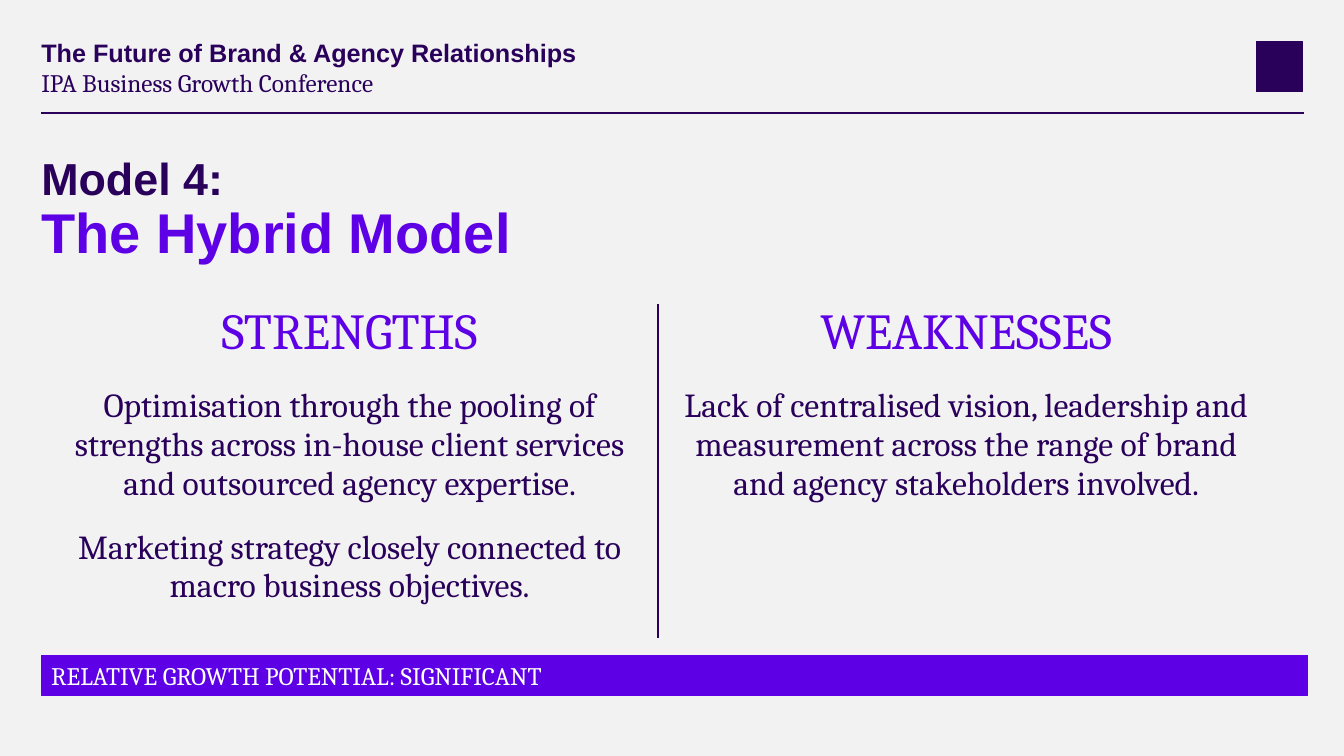
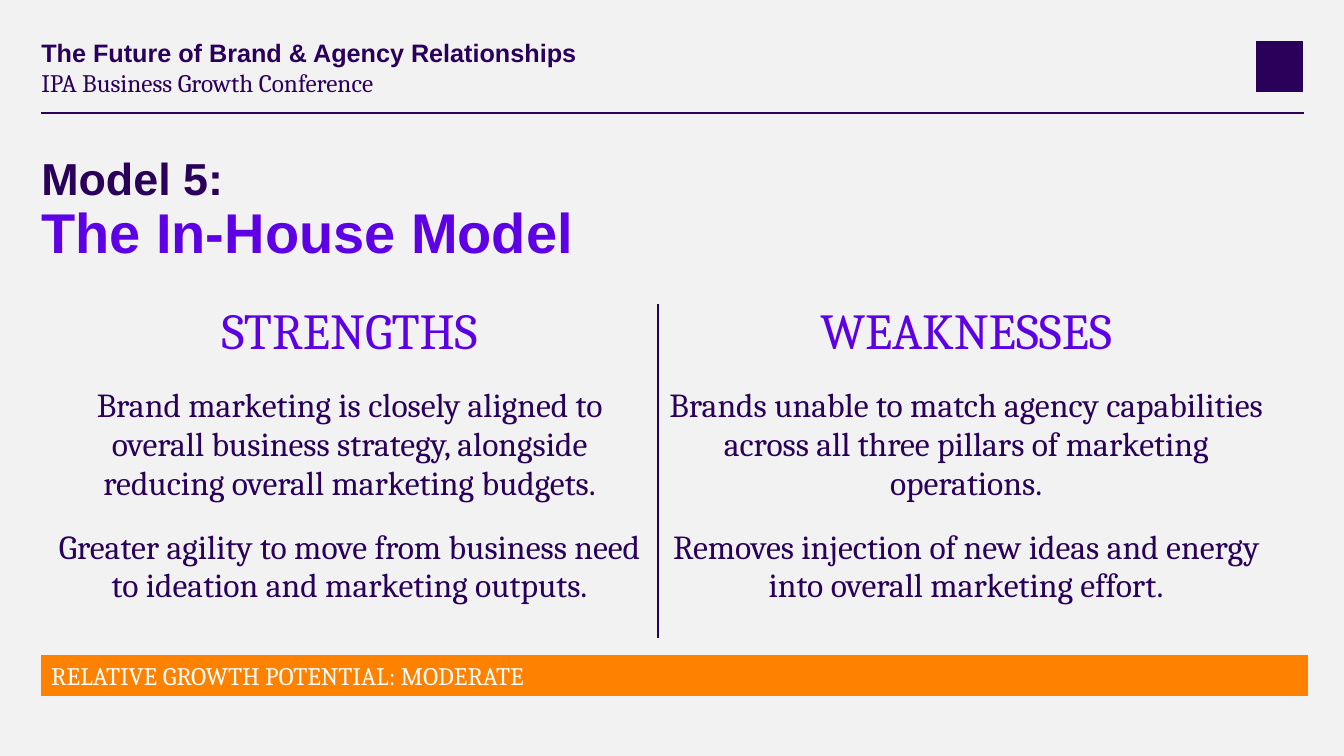
import enum

import pptx
import pptx.dml.color
import pptx.enum.shapes
import pptx.enum.text
import pptx.oxml
import pptx.oxml.ns
import pptx.util
from dataclasses import dataclass
from pptx.util import Inches

Align = pptx.enum.text.PP_ALIGN
Anchor = pptx.enum.text.MSO_ANCHOR


@dataclass(frozen=True)
class Theme:
    # Colours
    paper: str = "F2F2F2"
    ink: str = "29005A"
    accent: str = "5E00E6"
    white: str = "FFFFFF"
    # Fonts
    sans: str = "Arial"
    serif: str = "Cambria"
    # Type sizes and line width in points
    small: int = 18
    body: int = 24
    kicker: int = 32
    heading: int = 36
    title: int = 40
    rule: float = 1.5


class Rating(enum.Enum):
    SIGNIFICANT = "5E00E6"
    MODERATE = "FF8100"


def rgb(value):
    return pptx.dml.color.RGBColor.from_string(value)


def write(para, text, *, font, size, color, bold=False):
    """Add a formatted span of text to a paragraph."""
    span = para.add_run()
    span.text = text
    span.font.name = font
    span.font.size = pptx.util.Pt(size)
    span.font.bold = bold
    span.font.color.rgb = rgb(color)


def set_border(cell, side, color=None, width=0):
    """Draw one cell edge, or clear it when no color is given."""
    namespace = pptx.oxml.ns.nsdecls("a")
    if color:
        paint = f'<a:solidFill><a:srgbClr val="{color}"/></a:solidFill>'
    else:
        paint = "<a:noFill/>"
    edge = f'<a:ln{side} {namespace} w="{pptx.util.Pt(width)}">{paint}</a:ln{side}>'
    cell._tc.get_or_add_tcPr().append(pptx.oxml.parse_xml(edge))


class ModelDeck:
    LEFT = 0.41
    RIGHT = 12.93

    def __init__(self, theme):
        self.theme = theme
        self.deck = pptx.Presentation()
        self.deck.slide_width = Inches(13.33)
        self.deck.slide_height = Inches(7.5)
        self.page = None

    def add_page(self):
        self.page = self.deck.slides.add_slide(self.deck.slide_layouts[6])
        fill = self.page.background.fill
        fill.solid()
        fill.fore_color.rgb = rgb(self.theme.paper)
        self.add_header()

    def add_line(self, left, top, right, bottom):
        line = self.page.shapes.add_connector(
            pptx.enum.shapes.MSO_CONNECTOR.STRAIGHT,
            Inches(left), Inches(top), Inches(right), Inches(bottom))
        line.line.color.rgb = rgb(self.theme.ink)
        line.line.width = pptx.util.Pt(self.theme.rule)
        effects = f'<a:effectLst {pptx.oxml.ns.nsdecls("a")}/>'
        line._element.spPr.append(pptx.oxml.parse_xml(effects))

    def add_block(self, left, top, width, height, color):
        block = self.page.shapes.add_shape(
            pptx.enum.shapes.MSO_SHAPE.RECTANGLE,
            Inches(left), Inches(top), Inches(width), Inches(height))
        block.shadow.inherit = False
        block.fill.solid()
        block.fill.fore_color.rgb = rgb(color)
        block.line.color.rgb = rgb(color)
        block.line.width = pptx.util.Pt(0.75)
        return block

    def add_text(self, top, width, height, anchor=Anchor.TOP):
        """Add a box without margins and return its first paragraph."""
        box = self.page.shapes.add_textbox(
            Inches(self.LEFT), Inches(top), Inches(width), Inches(height))
        frame = box.text_frame
        frame.word_wrap = True
        frame.vertical_anchor = anchor
        frame.margin_left = frame.margin_right = 0
        frame.margin_top = frame.margin_bottom = 0
        para = frame.paragraphs[0]
        para.line_spacing = 0.9
        return para

    def add_header(self):
        theme = self.theme
        self.add_line(self.LEFT, 1.12, self.RIGHT, 1.12)
        # Plain emblem in the corner
        self.add_block(12.46, 0.41, 0.46, 0.5, theme.ink)
        write(self.add_text(0.4, 8.27, 0.27), "The Future of Brand & Agency Relationships",
              font=theme.sans, size=theme.small, color=theme.ink, bold=True)
        write(self.add_text(0.7, 8.27, 0.27), "IPA Business Growth Conference",
              font=theme.serif, size=theme.small, color=theme.ink)

    def add_title(self, number, name):
        theme = self.theme
        para = self.add_text(1.55, self.RIGHT - self.LEFT, 1.09, Anchor.MIDDLE)
        write(para, f"Model {number}:", font=theme.sans, size=theme.kicker,
              color=theme.ink, bold=True)
        para.add_line_break()
        write(para, name, font=theme.sans, size=theme.title,
              color=theme.accent, bold=True)

    def add_comparison(self, columns):
        """Set headed columns side by side, with a rule between them."""
        width, height = 12.23, 3.31
        table = self.page.shapes.add_table(
            1, len(columns), Inches(self.LEFT), Inches(3.02),
            Inches(width), Inches(height)).table
        table.first_row = table.horz_banding = False
        table.rows[0].height = Inches(height)
        last = len(columns) - 1
        for index, (heading, points) in enumerate(columns.items()):
            table.columns[index].width = Inches(width / len(columns))
            cell = table.cell(0, index)
            ruled = {"L": index > 0, "R": index < last, "T": False, "B": False}
            for side, shown in ruled.items():
                if shown:
                    set_border(cell, side, self.theme.ink, self.theme.rule)
                else:
                    set_border(cell, side)
            cell.fill.background()
            self.fill_cell(cell, heading, points)

    def fill_cell(self, cell, heading, points):
        theme = self.theme
        cell.margin_left = cell.margin_right = Inches(0.1)
        cell.margin_top = cell.margin_bottom = 0
        cell.vertical_anchor = Anchor.TOP
        frame = cell.text_frame
        for index, text in enumerate([heading, *points]):
            para = frame.add_paragraph() if index else frame.paragraphs[0]
            para.alignment = Align.CENTER
            para.space_after = pptx.util.Pt(18)
            write(para, text, font=theme.serif,
                  size=theme.body if index else theme.heading,
                  color=theme.ink if index else theme.accent)

    def add_rating(self, rating):
        bar = self.add_block(self.LEFT, 6.5, 12.56, 0.4, rating.value)
        bar.text_frame.word_wrap = True
        bar.text_frame.vertical_anchor = Anchor.MIDDLE
        para = bar.text_frame.paragraphs[0]
        para.alignment = Align.LEFT
        write(para, f"RELATIVE GROWTH POTENTIAL: {rating.name}",
              font=self.theme.serif, size=self.theme.small, color=self.theme.white)

    def add_model(self, number, name, strengths, weaknesses, rating):
        self.add_page()
        self.add_title(number, name)
        self.add_comparison({"STRENGTHS": strengths, "WEAKNESSES": weaknesses})
        self.add_rating(rating)


def main():
    models = ModelDeck(Theme())

    # Hybrid model
    models.add_model(
        4, "The Hybrid Model",
        strengths=[
            "Optimisation through the pooling of strengths across in-house "
            "client services and outsourced agency expertise.",
            "Marketing strategy closely connected to macro business objectives.",
        ],
        weaknesses=[
            "Lack of centralised vision, leadership and measurement across "
            "the range of brand and agency stakeholders involved.",
        ],
        rating=Rating.SIGNIFICANT)

    # In-house model
    models.add_model(
        5, "The In-House Model",
        strengths=[
            "Brand marketing is closely aligned to overall business strategy, "
            "alongside reducing overall marketing budgets.",
            "Greater agility to move from business need to ideation and "
            "marketing outputs.",
        ],
        weaknesses=[
            "Brands unable to match agency capabilities across all three "
            "pillars of marketing operations.",
            "Removes injection of new ideas and energy into overall "
            "marketing effort.",
        ],
        rating=Rating.MODERATE)

    models.deck.save("out.pptx")


if __name__ == "__main__":
    main()
